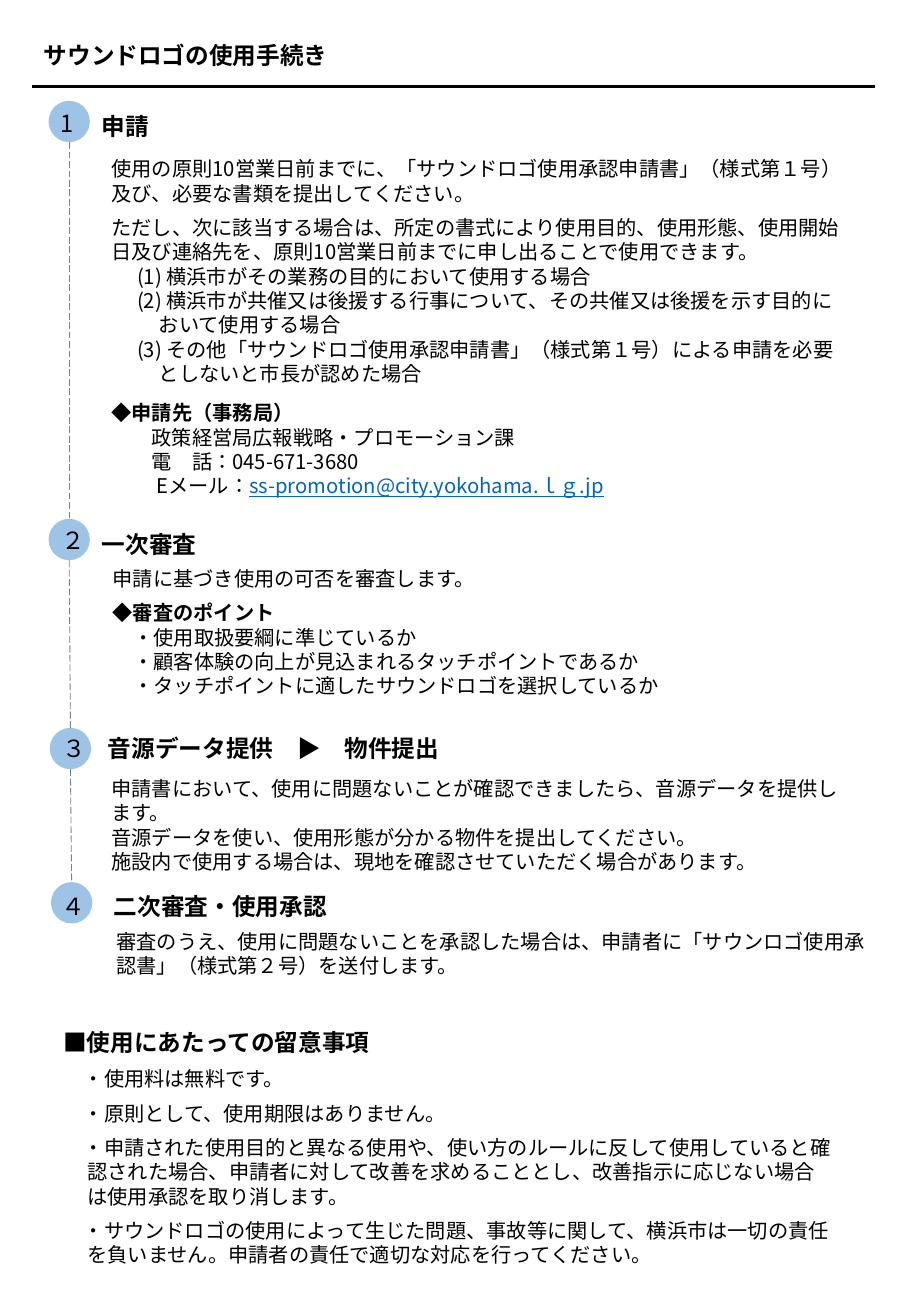
"""Build a one-page guide to the procedure for using the sound logo."""
from dataclasses import dataclass

from lxml.etree import SubElement
from pptx import Presentation
from pptx.dml.color import RGBColor
from pptx.enum.dml import MSO_LINE
from pptx.enum.lang import MSO_LANGUAGE_ID
from pptx.enum.shapes import MSO_CONNECTOR, MSO_SHAPE
from pptx.enum.text import MSO_ANCHOR, MSO_AUTO_SIZE, PP_ALIGN
from pptx.oxml.ns import qn
from pptx.util import Inches, Pt


@dataclass(frozen=True)
class Theme:
    font: str = "Noto Sans CJK JP"
    ink: str = "000000"
    link: str = "0563C1"
    marker: str = "9DC3E6"
    rail: str = "808080"
    heading: int = 14
    body: int = 12


@dataclass(frozen=True)
class Line:
    text: str
    left: float = 0
    first: float = 0
    before: float = 0
    bold: bool = False
    heading: bool = False
    link: str = ""


@dataclass(frozen=True)
class Step:
    number: str
    title: str
    marker: tuple
    number_at: tuple
    title_at: tuple
    body_box: tuple
    lines: list


def apply(target, formats):
    for name, value in formats.items():
        setattr(target, name, value)


class GuideSlide:
    def __init__(self, slide, theme):
        self.slide = slide
        self.theme = theme

    def add_run(self, paragraph, text, color, line):
        run = paragraph.add_run()
        run.text = text
        size = self.theme.heading if line.heading else self.theme.body
        apply(run.font, {
            "name": self.theme.font,
            "size": Pt(size),
            "bold": line.bold,
            "underline": color == self.theme.link,
            "language_id": MSO_LANGUAGE_ID.JAPANESE,
        })
        run.font.color.rgb = RGBColor.from_string(color)
        SubElement(run.font._element, qn("a:ea"), typeface=self.theme.font)

    def fill_text(self, shape, box, lines):
        places = ("left", "top", "width", "height")
        apply(shape, dict(zip(places, map(Inches, box))))
        frame = shape.text_frame
        apply(frame, {
            "word_wrap": True,
            "auto_size": MSO_AUTO_SIZE.NONE,
            "vertical_anchor": MSO_ANCHOR.TOP,
        })
        for index, line in enumerate(lines):
            paragraph = frame.add_paragraph() if index else frame.paragraphs[0]
            apply(paragraph, {
                "alignment": PP_ALIGN.LEFT,
                "space_before": Pt(line.before),
            })
            properties = paragraph._p.get_or_add_pPr()
            properties.set("marL", str(Inches(line.left)))
            properties.set("indent", str(Inches(line.first)))
            SubElement(properties, qn("a:buNone"))
            self.add_run(paragraph, line.text, self.theme.ink, line)
            if line.link:
                self.add_run(paragraph, line.link, self.theme.link, line)

    def text(self, box, lines):
        shape = self.slide.shapes.add_textbox(*map(Inches, box))
        self.fill_text(shape, box, lines)

    def marker(self, left, top, size):
        shape = self.slide.shapes.add_shape(
            MSO_SHAPE.OVAL, *map(Inches, (left, top, size, size)))
        shape.shadow.inherit = False
        shape.fill.solid()
        shape.fill.fore_color.rgb = RGBColor.from_string(self.theme.marker)
        shape.line.fill.background()

    def rule(self, start, end, color, width, dash=None):
        connector = self.slide.shapes.add_connector(
            MSO_CONNECTOR.STRAIGHT, *map(Inches, start + end))
        connector.line.color.rgb = RGBColor.from_string(color)
        apply(connector.line, {"width": Pt(width), "dash_style": dash})
        SubElement(connector._element.spPr, qn("a:effectLst"))

    def step(self, step, size):
        self.marker(*step.marker, size)
        self.text((*step.number_at, 0.42, 0.34), [Line(step.number, heading=True)])
        self.text((*step.title_at, 3.13, 0.34),
                  [Line(step.title, bold=True, heading=True)])
        self.text(step.body_box, step.lines)


MARKER_SIZE = 0.34
ITEM = {"left": 0.39, "first": -0.18}
CONTACT = {"left": 0.33}
POINT = {"left": 0.17}
NOTE = {"left": 0.2, "first": -0.03, "before": 6}

STEPS = [
    Step("1", "申請", (0.4, 0.83), (0.4, 0.85), (0.74, 0.87), (0.82, 1.24, 6.24, 2.94), [
        Line("使用の原則10営業日前までに、「サウンドロゴ使用承認申請書」（様式第１号）及び、必要な書類を提出してください。"),
        Line("ただし、次に該当する場合は、所定の書式により使用目的、使用形態、使用開始日及び連絡先を、原則10営業日前までに申し出ることで使用できます。", before=6),
        Line("(1) 横浜市がその業務の目的において使用する場合", **ITEM),
        Line("(2) 横浜市が共催又は後援する行事について、その共催又は後援を示す目的において使用する場合", **ITEM),
        Line("(3) その他「サウンドロゴ使用承認申請書」（様式第１号）による申請を必要としないと市長が認めた場合", **ITEM),
        Line("◆申請先（事務局）", before=9, bold=True),
        Line("政策経営局広報戦略・プロモーション課", **CONTACT),
        Line("電　話：045-671-3680", **CONTACT),
        Line("Eメール：", left=0.37, link="ss-promotion@city.yokohama.ｌｇ.jp"),
    ]),
    Step("２", "一次審査", (0.4, 4.27), (0.41, 4.28), (0.74, 4.31), (0.83, 4.61, 6.24, 1.19), [
        Line("申請に基づき使用の可否を審査します。", before=6),
        Line("◆審査のポイント", before=6, bold=True),
        Line("・使用取扱要綱に準じているか", **POINT),
        Line("・顧客体験の向上が見込まれるタッチポイントであるか", **POINT),
        Line("・タッチポイントに適したサウンドロゴを選択しているか", **POINT),
    ]),
    Step("３", "音源データ提供　▶　物件提出", (0.41, 5.99), (0.42, 5.99), (0.79, 5.99), (0.82, 6.34, 6.24, 0.71), [
        Line("申請書において、使用に問題ないことが確認できましたら、音源データを提供します。", before=6),
        Line("音源データを使い、使用形態が分かる物件を提出してください。"),
        Line("施設内で使用する場合は、現地を確認させていただく場合があります。"),
    ]),
    Step("４", "二次審査・使用承認", (0.42, 7.26), (0.41, 7.29), (0.84, 7.29), (0.86, 7.6, 6.39, 0.5), [
        Line("審査のうえ、使用に問題ないことを承認した場合は、申請者に「サウンロゴ使用承認書」（様式第２号）を送付します。", before=6),
    ]),
]

NOTES = [
    Line("■使用にあたっての留意事項", before=6, bold=True, heading=True),
    Line("・使用料は無料です。", before=6, **POINT),
    Line("・原則として、使用期限はありません。", before=6, **POINT),
    Line("・申請された使用目的と異なる使用や、使い方のルールに反して使用していると確認された場合、申請者に対して改善を求めることとし、改善指示に応じない場合は使用承認を取り消します。", **NOTE),
    Line("・サウンドロゴの使用によって生じた問題、事故等に関して、横浜市は一切の責任を負いません。申請者の責任で適切な対応を行ってください。", **NOTE),
]


def main():
    presentation = Presentation()
    apply(presentation, {"slide_width": Inches(7.5), "slide_height": Inches(10.83)})
    slide = presentation.slides.add_slide(presentation.slide_layouts[1])
    theme = Theme()
    guide = GuideSlide(slide, theme)

    title, notes = slide.placeholders
    guide.fill_text(title, (0.26, 0.29, 6.67, 0.34),
                    [Line("サウンドロゴの使用手続き", bold=True, heading=True)])
    guide.fill_text(notes, (0.42, 8.41, 6.53, 2.09), NOTES)
    guide.rule((0.26, 0.71), (7.2, 0.71), theme.ink, 1.5)

    for step in STEPS:
        guide.step(step, MARKER_SIZE)
    for upper, lower in zip(STEPS, STEPS[1:]):
        start = (upper.marker[0] + MARKER_SIZE / 2, upper.marker[1] + MARKER_SIZE)
        end = (lower.marker[0] + MARKER_SIZE / 2, lower.marker[1])
        guide.rule(start, end, theme.rail, 0.5, MSO_LINE.LONG_DASH)

    presentation.save("out.pptx")


if __name__ == "__main__":
    main()
